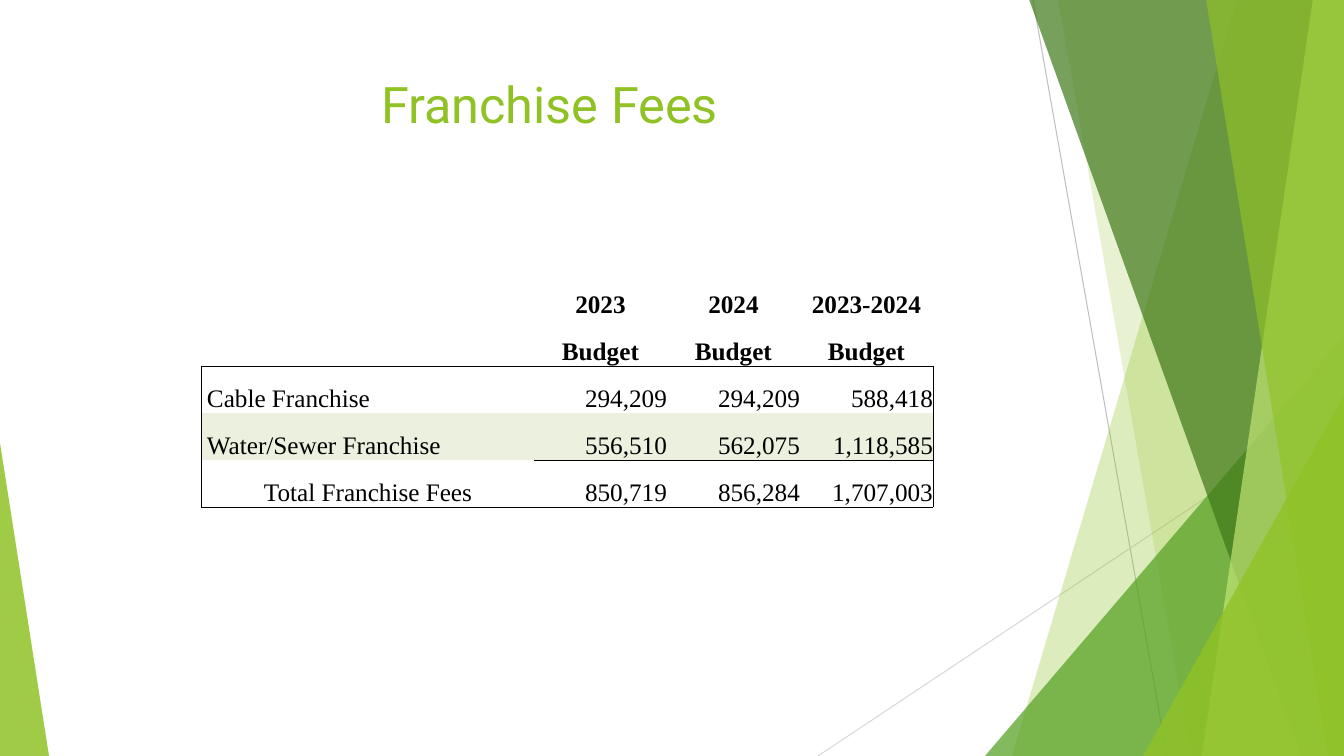
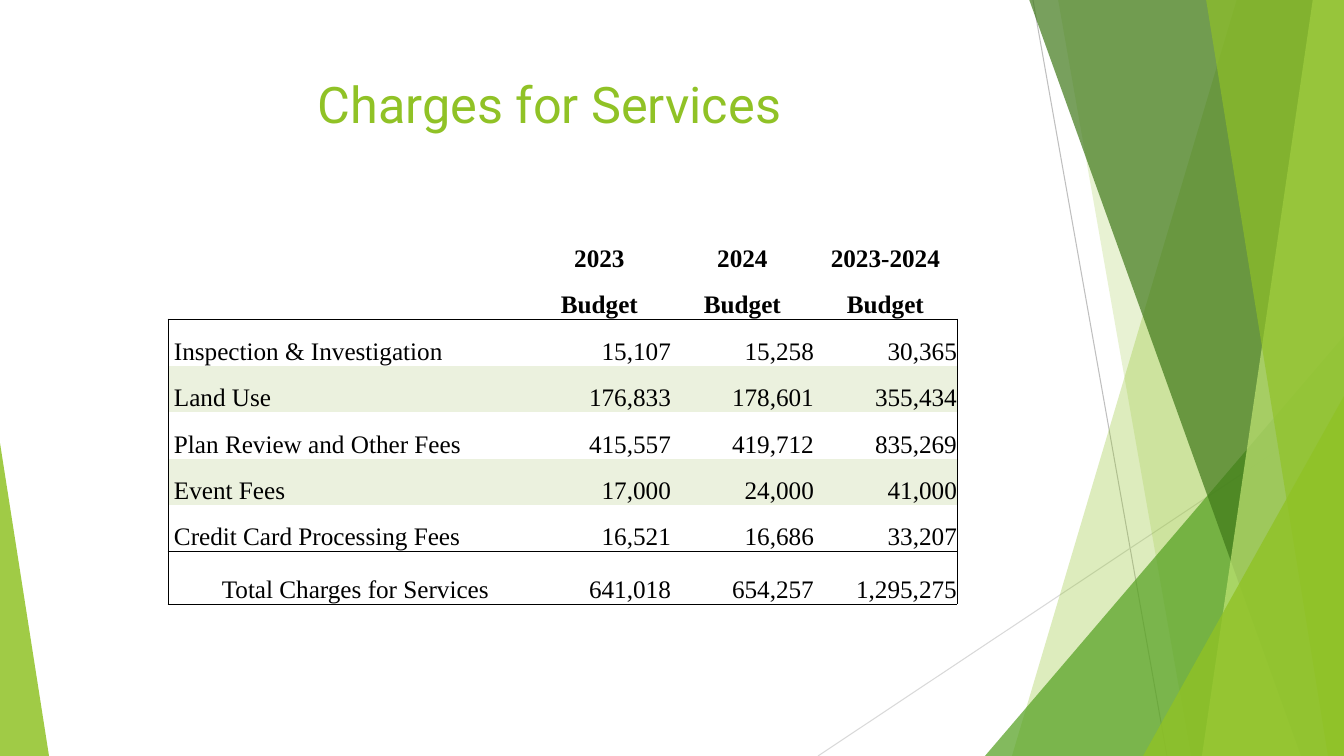
from lxml import etree
from pptx import Presentation
from pptx.dml.color import RGBColor
from pptx.enum.shapes import MSO_CONNECTOR, MSO_SHAPE
from pptx.enum.text import MSO_ANCHOR, PP_ALIGN
from pptx.oxml.ns import qn
from pptx.util import Pt

PX = 914400 / 100.8
SLIDE_W, SLIDE_H = 1344, 756
LEFT, CENTER, RIGHT = PP_ALIGN.LEFT, PP_ALIGN.CENTER, PP_ALIGN.RIGHT
BOTTOM, TOP = MSO_ANCHOR.BOTTOM, MSO_ANCHOR.TOP
TRIANGLE, STRAIGHT = MSO_SHAPE.ISOSCELES_TRIANGLE, MSO_CONNECTOR.STRAIGHT

LIME, GREEN, DARK_GREEN, PALE_LIME = "90C226", "54A021", "3F7819", "C0E474"
BLACK, BAND = "000000", "EBF1DE"
TITLE_FONT, TABLE_FONT = "Roboto", "Times New Roman"
BORDER_PT = 0.5
LABEL_INDENT = 6
HEADERS = [["", "", "2023", "2024", "2023-2024"],
           ["", "", "Budget", "Budget", "Budget"]]

# Lines: from, to, colour
LINES = [((1033, 0), (1167, 756), "BFBFBF"),
         ((1344, 406), (818, 756), "D9D9D9")]
# Facets reaching the right edge: top left x, bottom left x, colour, opacity.
# Triangles: left, top, width, height, apex, colour, opacity.
FACETS = [
    (1237, 1012, LIME, 30),
    (1058, 1191, LIME, 20),
    (985, 336, 359, 420, 1, GREEN, 72),
    (1029, 1301, DARK_GREEN, 70),
    (1313, 1202, PALE_LIME, 70),
    (1206, 1328, LIME, 65),
    (1143, 396, 201, 360, 1, LIME, 80),
    (0, 443, 49, 313, 0, LIME, 85),
]


def px(n):
    return round(n * PX)


def rgb(color):
    return RGBColor.from_string(color)


def style_runs(p, font, size, color, bold=False):
    for r in p.runs:
        r.font.name = font
        r.font.size = Pt(size)
        r.font.bold = bold
        r.font.color.rgb = rgb(color)


def fill_shape(sp, color, opacity):
    sp.shadow.inherit = False
    sp.line.fill.background()
    sp.fill.solid()
    sp.fill.fore_color.rgb = rgb(color)
    clr = sp._element.spPr.find(qn("a:solidFill"))[0]
    etree.SubElement(clr, qn("a:alpha"), val=str(opacity * 1000))


def add_line(slide, start, end, color):
    line = slide.shapes.add_connector(STRAIGHT, *map(px, start + end))
    line.line.color.rgb = rgb(color)
    line.line.width = Pt(0.75)
    etree.SubElement(line._element.spPr, qn("a:effectLst"))


def add_edge_facet(slide, top_x, bottom_x, color, opacity):
    builder = slide.shapes.build_freeform(top_x, -1, scale=PX)
    builder.add_line_segments(
        [(SLIDE_W, -1), (SLIDE_W, SLIDE_H), (bottom_x, SLIDE_H)], close=True)
    fill_shape(builder.convert_to_shape(), color, opacity)


def add_triangle(slide, x, y, w, h, apex, color, opacity):
    sp = slide.shapes.add_shape(TRIANGLE, px(x), px(y), px(w), px(h))
    sp.adjustments[0] = apex
    fill_shape(sp, color, opacity)


def add_backdrop(slide):
    for line in LINES:
        add_line(slide, *line)
    for facet in FACETS:
        add = add_edge_facet if len(facet) == 4 else add_triangle
        add(slide, *facet)


def add_title(slide, text, x, y, w, h):
    tf = slide.shapes.add_textbox(px(x), px(y), px(w), px(h)).text_frame
    tf.word_wrap = True
    tf.vertical_anchor = TOP
    p = tf.paragraphs[0]
    p.text = text
    p.alignment = CENTER
    style_runs(p, TITLE_FONT, 36, LIME)


def set_borders(cell, sides):
    """Draw the named sides (L, R, T, B) and blank the others."""
    tcPr = cell._tc.get_or_add_tcPr()
    for side in "LRTB":
        ln = etree.SubElement(tcPr, qn("a:ln" + side), w=str(Pt(BORDER_PT)))
        if side in sides:
            fill = etree.SubElement(ln, qn("a:solidFill"))
            etree.SubElement(fill, qn("a:srgbClr"), val=BLACK)
        else:
            etree.SubElement(ln, qn("a:noFill"))


def cell_sides(row, col, last_row, last_col, total_col):
    """Box the body; rule off the total row from total_col rightwards."""
    head = len(HEADERS)
    ruled_above = {head, last_row} if col >= total_col else {head}
    sides = ""
    if row >= head:
        sides += "L" * (col == 0) + "R" * (col == last_col)
    if row in ruled_above:
        sides += "T"
    if row == last_row or row + 1 in ruled_above:
        sides += "B"
    return sides


def fill_cell(cell, text, align, bold):
    cell.vertical_anchor = BOTTOM
    cell.margin_left = cell.margin_right = 0
    cell.margin_top = cell.margin_bottom = 0
    p = cell.text_frame.paragraphs[0]
    p.text = text
    p.alignment = align
    style_runs(p, TABLE_FONT, 18, BLACK, bold)


def add_budget_table(slide, x, y, widths, heights, body, total_col,
                     total_align, total_indent):
    rows = HEADERS + [[label, "", *values] for label, *values in body]
    frame = slide.shapes.add_table(len(rows), len(widths), px(x), px(y),
                                   px(sum(widths)), px(sum(heights)))
    table = frame.table
    table.first_row = table.horz_banding = False
    for column, width in zip(table.columns, widths):
        column.width = px(width)
    for row, height in zip(table.rows, heights):
        row.height = px(height)

    last_row, last_col = len(rows) - 1, len(widths) - 1
    for i, row in enumerate(rows):
        is_head, is_total = i < len(HEADERS), i == last_row
        for j, text in enumerate(row):
            cell = table.cell(i, j)
            align = CENTER if is_head else RIGHT
            if j == 0:
                align = total_align if is_total else LEFT
            fill_cell(cell, text, align, is_head)
            if j == 0:
                indent = total_indent if is_total else LABEL_INDENT
                if align == RIGHT:
                    cell.margin_right = px(indent)
                else:
                    cell.margin_left = px(indent)
            set_borders(cell, cell_sides(i, j, last_row, last_col, total_col))
            if not is_head and not is_total and i % 2:
                cell.fill.solid()
                cell.fill.fore_color.rgb = rgb(BAND)
            else:
                cell.fill.background()


def add_budget_slide(prs, title, **table):
    slide = prs.slides.add_slide(prs.slide_layouts[6])
    add_backdrop(slide)
    add_title(slide, title, 76, 68, 947, 109)
    add_budget_table(slide, **table)


def main():
    prs = Presentation()
    prs.slide_width, prs.slide_height = px(SLIDE_W), px(SLIDE_H)
    add_budget_slide(
        prs, "Franchise Fees", x=201, y=269,
        widths=[302, 31, 133, 133, 133], heights=[50, 47, 47, 47, 47],
        body=[
            ("Cable Franchise", "294,209", "294,209", "588,418"),
            ("Water/Sewer Franchise", "556,510", "562,075", "1,118,585"),
            ("Total Franchise Fees", "850,719", "856,284", "1,707,003"),
        ],
        total_col=2, total_align=LEFT, total_indent=63)
    add_budget_slide(
        prs, "Charges for Services", x=168, y=227,
        widths=[327, 33, 143, 143, 143],
        heights=[46, 46, 47, 46, 47, 46, 46, 53],
        body=[
            ("Inspection & Investigation", "15,107", "15,258", "30,365"),
            ("Land Use", "176,833", "178,601", "355,434"),
            ("Plan Review and Other Fees", "415,557", "419,712", "835,269"),
            ("Event Fees", "17,000", "24,000", "41,000"),
            ("Credit Card Processing Fees", "16,521", "16,686", "33,207"),
            ("Total Charges for Services", "641,018", "654,257", "1,295,275"),
        ],
        total_col=0, total_align=RIGHT, total_indent=LABEL_INDENT)
    prs.save("out.pptx")


if __name__ == "__main__":
    main()
